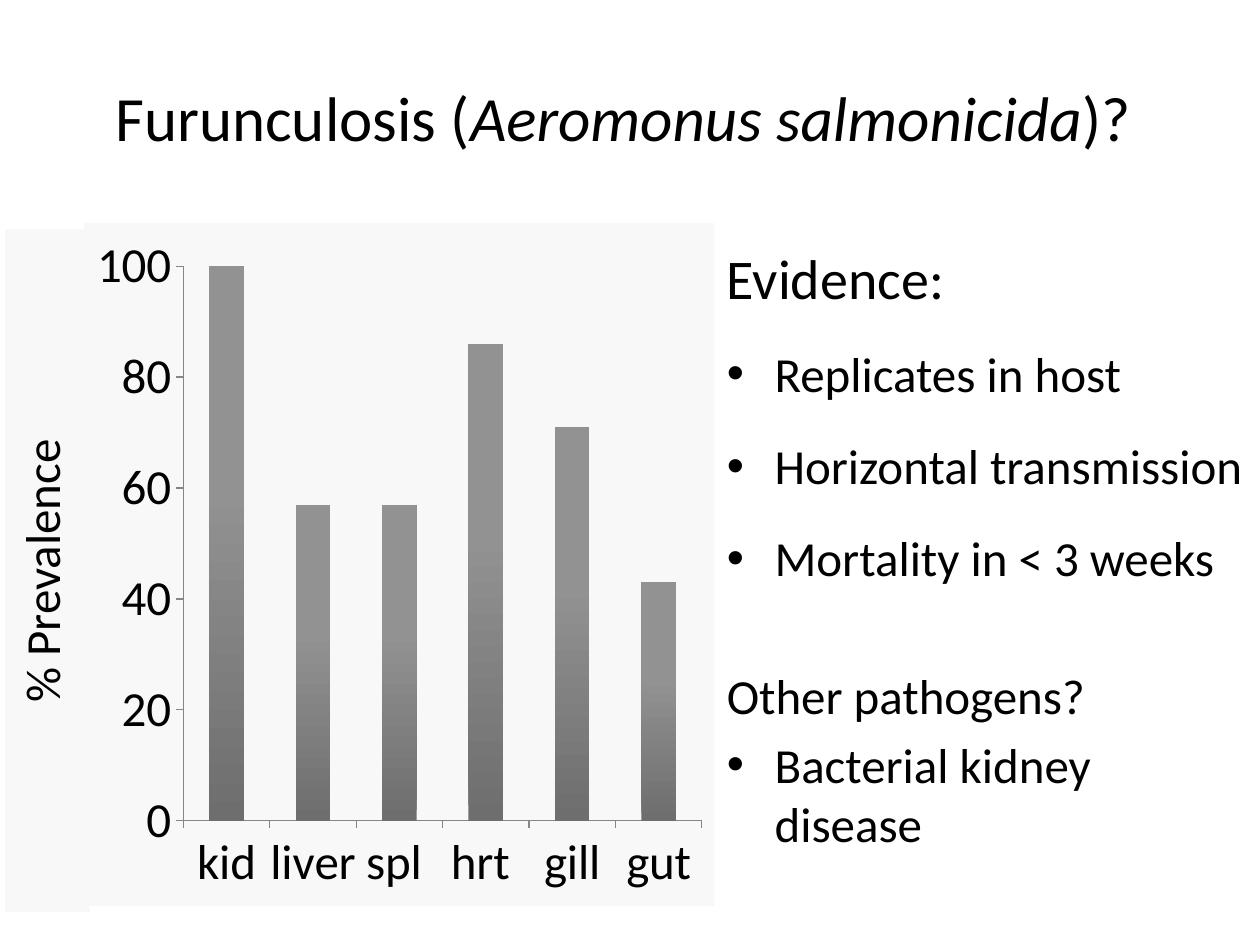
import pptx
import pptx.chart.data
import pptx.dml.color
import pptx.enum.chart
import pptx.enum.shapes
import pptx.enum.text
import pptx.oxml
import pptx.oxml.ns
import pptx.util

# Content
TITLE = [("Furunculosis (", False), ("Aeromonus salmonicida", True), (")? ", False)]
# text, size, bulleted, line spacing, space before
EVIDENCE = [
    ("Evidence:", 32, False, 1.0, 6.4),
    ("Replicates in host", 28, True, 1.4, 5.6),
    ("Horizontal transmission", 28, True, 1.4, 5.6),
    ("Mortality in < 3 weeks", 28, True, 1.4, 5.6),
    ("Other pathogens?", 28, False, 1.0, 45),
    ("Bacterial kidney disease", 28, True, 1.0, 5.6),
]
PREVALENCE = {"kid": 100, "liver": 57, "spl ": 57, "hrt ": 86, "gill": 71, "gut": 43}
AXIS_TITLE = "% Prevalence"

FONT, BLACK, PANEL, AXIS = "Calibri", "000000", "F8F8F8", "868686"
BAR_BOTTOM, BAR_TOP = "6E6E6E", "929292"
HANGING = 0.38

# Places: left, top, width, height in inches
TITLE_BOX = (0.5, 0.3, 9, 1.25)
CHART_BOX = (0.67, 1.77, 5, 5.42)
LABEL_BOX = (0.04, 1.82, 0.67, 5.42)
EVIDENCE_BOX = (5.67, 1.88, 4.33, 4.95)


def color(value):
    return pptx.dml.color.RGBColor.from_string(value)


def inches(box):
    return [pptx.util.Inches(length) for length in box]


def style(font, size):
    font.name = FONT
    font.size = pptx.util.Pt(size)
    font.color.rgb = color(BLACK)


def add_bullet(paragraph):
    properties = paragraph._p.get_or_add_pPr()
    indent = pptx.util.Inches(HANGING)
    properties.set("marL", str(indent))
    properties.set("indent", str(-indent))
    namespace = pptx.oxml.ns.nsdecls("a")
    properties.append(pptx.oxml.parse_xml(f'<a:buFont {namespace} typeface="Arial"/>'))
    properties.append(pptx.oxml.parse_xml(f'<a:buChar {namespace} char="•"/>'))


def add_title(slide):
    title = slide.shapes.title
    title.left, title.top, title.width, title.height = inches(TITLE_BOX)
    title.text_frame.vertical_anchor = pptx.enum.text.MSO_ANCHOR.MIDDLE
    paragraph = title.text_frame.paragraphs[0]
    paragraph.alignment = pptx.enum.text.PP_ALIGN.CENTER
    style(paragraph.font, 36)
    for text, italic in TITLE:
        run = paragraph.add_run()
        run.text = text
        run.font.italic = italic


def add_evidence(slide):
    frame = slide.shapes.add_textbox(*inches(EVIDENCE_BOX)).text_frame
    frame.word_wrap = True
    for index, (text, size, bulleted, spacing, before) in enumerate(EVIDENCE):
        paragraph = frame.add_paragraph() if index else frame.paragraphs[0]
        paragraph.text = text
        paragraph.line_spacing = spacing
        paragraph.space_before = pptx.util.Pt(before)
        style(paragraph.font, size)
        if bulleted:
            add_bullet(paragraph)


def add_prevalence_chart(slide):
    data = pptx.chart.data.CategoryChartData()
    data.categories = list(PREVALENCE)
    data.add_series("Series 1", list(PREVALENCE.values()))
    chart = slide.shapes.add_chart(
        pptx.enum.chart.XL_CHART_TYPE.COLUMN_CLUSTERED, *inches(CHART_BOX), data
    ).chart
    chart.has_legend = False
    chart.has_title = False
    style(chart.font, 18)

    # Panel behind the chart
    chart.element.find(pptx.oxml.ns.qn("c:chart")).addnext(pptx.oxml.parse_xml(
        f'<c:spPr {pptx.oxml.ns.nsdecls("c", "a")}><a:solidFill><a:srgbClr val="{PANEL}"/>'
        "</a:solidFill><a:ln><a:noFill/></a:ln></c:spPr>"
    ))

    # Axes
    for axis in (chart.category_axis, chart.value_axis):
        axis.has_major_gridlines = False
        axis.major_tick_mark = pptx.enum.chart.XL_TICK_MARK.OUTSIDE
        axis.format.line.color.rgb = color(AXIS)
        style(axis.tick_labels.font, 28)
    chart.value_axis.minimum_scale = 0
    chart.value_axis.maximum_scale = 100
    chart.value_axis.major_unit = 20

    # Columns, shaded from bottom to top
    plot = chart.plots[0]
    plot.gap_width = 150
    plot.vary_by_categories = False
    fill = plot.series[0].format.fill
    fill.gradient()
    fill.gradient_angle = 90
    stops = zip(fill.gradient_stops, ((0, BAR_BOTTOM), (0.6, BAR_TOP)))
    for stop, (position, shade) in stops:
        stop.position = position
        stop.color.rgb = color(shade)


def add_axis_title(slide):
    label = slide.shapes.add_shape(
        pptx.enum.shapes.MSO_SHAPE.RECTANGLE, *inches(LABEL_BOX)
    )
    label.shadow.inherit = False
    label.fill.solid()
    label.fill.fore_color.rgb = color(PANEL)
    label.line.fill.background()
    frame = label.text_frame
    frame.vertical_anchor = pptx.enum.text.MSO_ANCHOR.TOP
    frame._txBody.bodyPr.set("vert", "vert270")
    paragraph = frame.paragraphs[0]
    paragraph.text = AXIS_TITLE
    paragraph.alignment = pptx.enum.text.PP_ALIGN.CENTER
    style(paragraph.font, 28)


def main():
    presentation = pptx.Presentation()
    presentation.slide_width = pptx.util.Inches(10)
    presentation.slide_height = pptx.util.Inches(7.5)
    slide = presentation.slides.add_slide(presentation.slide_layouts.get_by_name("Title Only"))
    add_title(slide)
    add_evidence(slide)
    add_prevalence_chart(slide)
    add_axis_title(slide)
    presentation.save("out.pptx")


if __name__ == "__main__":
    main()
